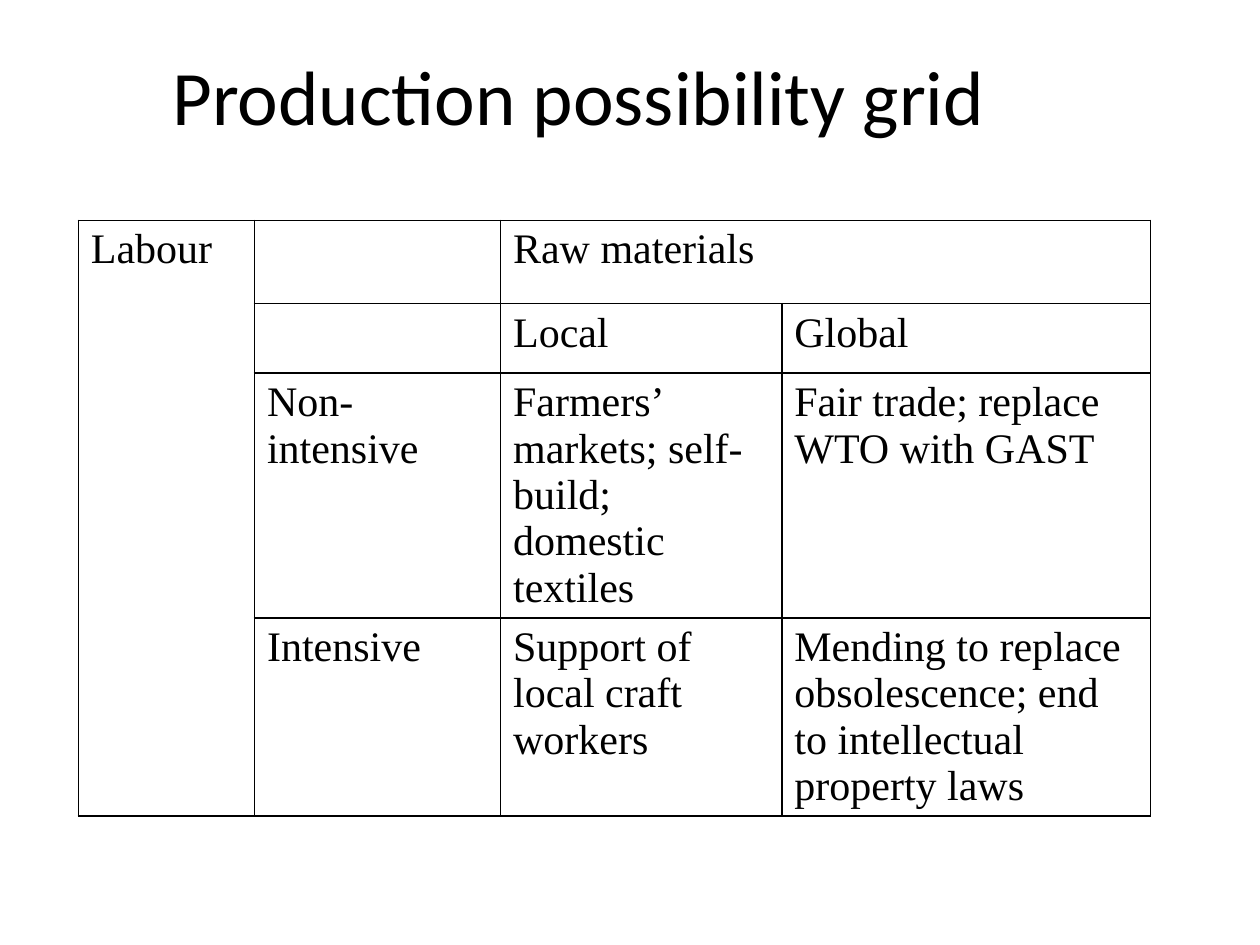
from lxml import etree
from pptx import Presentation
from pptx.dml.color import RGBColor
from pptx.enum.text import MSO_ANCHOR, PP_ALIGN
from pptx.oxml.ns import qn
from pptx.util import Cm, Pt

CENTER = PP_ALIGN.CENTER
LEFT = PP_ALIGN.LEFT
MIDDLE = MSO_ANCHOR.MIDDLE
TOP = MSO_ANCHOR.TOP
BLACK = RGBColor(0, 0, 0)

COLUMN_WIDTHS = [3.55, 4.96, 5.67, 7.43]
ROW_HEIGHTS = [1.68, 1.4, 4.93, 4]
GRID = [
    ["Labour", "", "Raw materials", ""],
    ["", "", "Local", "Global"],
    ["", "Non-intensive", "Farmers’ markets; self-build; domestic textiles",
     "Fair trade; replace WTO with GAST"],
    ["", "Intensive", "Support of local craft workers",
     "Mending to replace obsolescence; end to intellectual property laws"],
]
MERGES = [((0, 0), (3, 0)), ((0, 2), (0, 3))]


class SlideBuilder:
    title_font, title_size = "Calibri", 44
    cell_font, cell_size = "Times New Roman", 24
    border_width = 1

    def __init__(self, slide):
        self.slide = slide

    def add_text(self, frame, text, font, size, align):
        para = frame.paragraphs[0]
        para.alignment = align
        span = para.add_run()
        span.text = text
        span.font.name = font
        span.font.size = Pt(size)
        span.font.color.rgb = BLACK

    def title(self, text, left, top, width, height):
        box = self.slide.shapes.title
        box.left, box.top, box.width, box.height = map(Cm, (left, top, width, height))
        box.text_frame.vertical_anchor = MIDDLE
        self.add_text(box.text_frame, text, self.title_font, self.title_size, CENTER)

    def border(self, cell):
        properties = cell._tc.get_or_add_tcPr()
        for index, side in enumerate(("lnL", "lnR", "lnT", "lnB")):
            line = etree.Element(qn(f"a:{side}"), w=str(Pt(self.border_width)))
            fill = etree.SubElement(line, qn("a:solidFill"))
            etree.SubElement(fill, qn("a:srgbClr"), val=str(BLACK))
            properties.insert(index, line)

    def table(self, rows, widths, heights, merges, left, top):
        frame = self.slide.shapes.add_table(
            len(rows), len(widths), Cm(left), Cm(top), Cm(sum(widths)), Cm(sum(heights)))
        table = frame.table
        table.first_row = table.horz_banding = False
        for column, width in zip(table.columns, widths):
            column.width = Cm(width)
        for row, height in zip(table.rows, heights):
            row.height = Cm(height)
        for first, last in merges:
            table.cell(*first).merge(table.cell(*last))
        for row, texts in zip(table.rows, rows):
            for cell, text in zip(row.cells, texts):
                cell.fill.background()
                cell.vertical_anchor = TOP
                self.border(cell)
                if text:
                    self.add_text(cell.text_frame, text, self.cell_font, self.cell_size, LEFT)


def main():
    deck = Presentation()
    deck.slide_width, deck.slide_height = Cm(25.4), Cm(19.05)
    title_only = deck.slide_layouts[5]
    builder = SlideBuilder(deck.slides.add_slide(title_only))
    builder.title("Production possibility grid", 0.53, 0.64, 22.28, 2.54)
    builder.table(GRID, COLUMN_WIDTHS, ROW_HEIGHTS, MERGES, 1.58, 4.44)
    deck.save("out.pptx")


if __name__ == "__main__":
    main()
